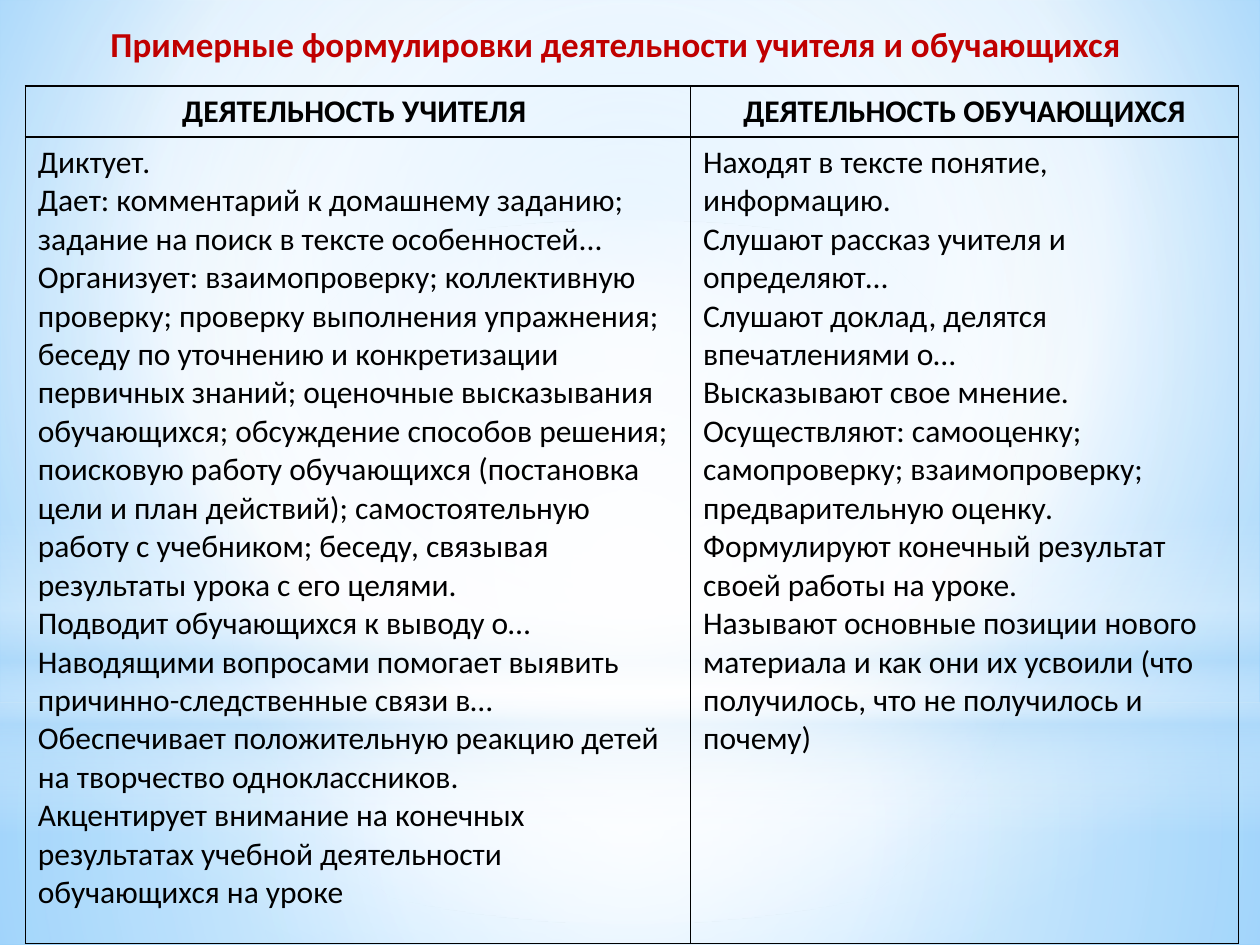
"""Builds a slide with a table of teacher and student activity wordings."""
from dataclasses import dataclass

from lxml import etree
from pptx import Presentation
from pptx.dml.color import RGBColor
from pptx.enum.shapes import MSO_SHAPE
from pptx.enum.text import MSO_ANCHOR, PP_ALIGN
from pptx.oxml.ns import qn
from pptx.util import Cm, Pt

RECTANGLE, ELLIPSE = MSO_SHAPE.RECTANGLE, MSO_SHAPE.OVAL
TOP = MSO_ANCHOR.TOP
LEFT, CENTER = PP_ALIGN.LEFT, PP_ALIGN.CENTER
FONT = "Calibri"
COLORS = {
    "title": "C00000", "text": "000000", "border": "000000", "white": "FFFFFF",
    "haze": "B4DCFA", "sky": "9ED5FF", "deep": "5BB9FF",
}
WIDTH, HEIGHT = 25.4, 19.05
COLUMNS = (13.41, 11.05)
ROWS = (1.02, 16.26)
MIDDLE = (50, 50, 50, 50)


@dataclass(frozen=True)
class Gradient:
    """Stops of position, colour and opacity; linear when focus is None."""
    stops: tuple[tuple[int, str, int], ...]
    focus: tuple[int, int, int, int] | None = MIDDLE


@dataclass(frozen=True)
class Glow:
    """A full-width translucent backdrop shape."""
    kind: int
    top: float
    height: float
    gradient: Gradient


@dataclass(frozen=True)
class Column:
    """A table column with its heading and lines."""
    heading: str
    lines: tuple[str, ...]


SKY = Gradient(((0, "sky", 100), (60, "white", 100), (100, "deep", 100)), (20, 10, 20, 60))
GLOWS = (
    Glow(RECTANGLE, 14.17, 4.88, Gradient(((0, "white", 91), (37, "white", 76), (100, "haze", 79)))),
    Glow(RECTANGLE, 0, 14.17, Gradient(((0, "white", 89), (48, "white", 62), (100, "haze", 79)))),
    Glow(RECTANGLE, 10.46, 6.35, Gradient(
        ((0, "white", 0), (29, "white", 30), (45, "haze", 40),
         (55, "white", 26), (65, "haze", 60), (100, "white", 0)), None)),
    Glow(ELLIPSE, 4.45, 14.17, Gradient(((0, "white", 100), (56, "white", 0)))),
)
TITLE = "Примерные формулировки деятельности учителя и обучающихся "
ACTIVITIES = (
    Column("ДЕЯТЕЛЬНОСТЬ УЧИТЕЛЯ ", (
        "Диктует.",
        "Дает: комментарий к домашнему заданию; задание на поиск в тексте особенностей...",
        "Организует: взаимопроверку; коллективную проверку; проверку выполнения упражнения; "
        "беседу по уточнению и конкретизации первичных знаний; оценочные высказывания "
        "обучающихся; обсуждение способов решения; поисковую работу обучающихся (постановка "
        "цели и план действий); самостоятельную работу с учебником; беседу, связывая "
        "результаты урока с его целями.",
        "Подводит обучающихся к выводу о…",
        "Наводящими вопросами помогает выявить причинно-следственные связи в…",
        "Обеспечивает положительную реакцию детей на творчество одноклассников.",
        "Акцентирует внимание на конечных результатах учебной деятельности обучающихся на уроке",
    )),
    Column("ДЕЯТЕЛЬНОСТЬ ОБУЧАЮЩИХСЯ", (
        "Находят в тексте понятие, информацию.",
        "Слушают рассказ учителя и определяют…",
        "Слушают доклад, делятся впечатлениями о…",
        "Высказывают свое мнение.",
        "Осуществляют: самооценку; самопроверку; взаимопроверку;",
        "предварительную оценку.",
        "Формулируют конечный результат своей работы на уроке.",
        "Называют основные позиции нового материала и как они их усвоили "
        "(что получилось, что не получилось и почему)",
    )),
)


def add_child(parent, tag: str, **attributes):
    """Append an XML element with the given attributes."""
    values = {name: str(value) for name, value in attributes.items()}
    return etree.SubElement(parent, qn(tag), values)


def apply_gradient(holder, gradient: Gradient) -> None:
    """Replace the solid fill of a holder with a gradient."""
    solid = holder.find(qn("a:solidFill"))
    fill = etree.Element(qn("a:gradFill"), {"rotWithShape": "1"})
    stops = add_child(fill, "a:gsLst")
    for position, color, opacity in gradient.stops:
        stop = add_child(stops, "a:gs", pos=position * 1000)
        shade = add_child(stop, "a:srgbClr", val=COLORS[color])
        if opacity < 100:
            add_child(shade, "a:alpha", val=opacity * 1000)
    if gradient.focus is None:
        add_child(fill, "a:lin", ang=90 * 60000, scaled=0)
    else:
        route = add_child(fill, "a:path", path="circle")
        edges = {side: share * 1000 for side, share in zip("ltrb", gradient.focus)}
        add_child(route, "a:fillToRect", **edges)
    holder.replace(solid, fill)


def draw_glow(page, glow: Glow) -> None:
    """Draw one backdrop shape."""
    shape = page.shapes.add_shape(glow.kind, 0, Cm(glow.top), Cm(WIDTH), Cm(glow.height))
    shape.shadow.inherit = False
    shape.line.fill.background()
    shape.fill.solid()
    apply_gradient(shape.element.spPr, glow.gradient)


def write_lines(frame, lines: tuple[str, ...], size: int, color: str, bold: bool, align) -> None:
    """Write each line as a paragraph with one run."""
    for index, line in enumerate(lines):
        para = frame.add_paragraph() if index else frame.paragraphs[0]
        para.alignment = align
        span = para.add_run()
        span.text = line
        span.font.name, span.font.size, span.font.bold = FONT, Pt(size), bold
        span.font.color.rgb = RGBColor.from_string(COLORS[color])


def draw_title(page) -> None:
    """Place the title above the backdrop."""
    box = page.shapes.title
    box.element.getparent().append(box.element)
    box.left, box.top, box.width, box.height = Cm(0.05), Cm(0.33), Cm(24.89), Cm(1.12)
    box.text_frame.word_wrap = True
    box.text_frame.vertical_anchor = TOP
    write_lines(box.text_frame, (TITLE,), 20, "title", True, CENTER)


def frame_cell(cell) -> None:
    """Clear the cell fill and outline its four sides."""
    cell.fill.background()
    properties = cell._tc.get_or_add_tcPr()
    for index, side in enumerate("LRTB"):
        border = etree.Element(qn(f"a:ln{side}"), {"w": str(Pt(1))})
        fill = add_child(border, "a:solidFill")
        add_child(fill, "a:srgbClr", val=COLORS["border"])
        properties.insert(index, border)


def draw_table(page, columns: tuple[Column, ...]) -> None:
    """Draw the two-column activity table."""
    table = page.shapes.add_table(len(ROWS), len(columns), Cm(0.51), Cm(1.73),
                                  Cm(sum(COLUMNS)), Cm(sum(ROWS))).table
    table.horz_banding = False
    for row, height in zip(table.rows, ROWS):
        row.height = Cm(height)
    for index, column in enumerate(columns):
        table.columns[index].width = Cm(COLUMNS[index])
        heading, body = table.cell(0, index), table.cell(1, index)
        write_lines(heading.text_frame, (column.heading,), 18, "text", True, CENTER)
        write_lines(body.text_frame, column.lines, 18, "text", False, LEFT)
        for cell in (heading, body):
            frame_cell(cell)


def main() -> None:
    """Build and save the deck."""
    deck = Presentation()
    deck.slide_width, deck.slide_height = Cm(WIDTH), Cm(HEIGHT)
    page = deck.slides.add_slide(deck.slide_layouts[5])
    page.background.fill.solid()
    apply_gradient(page.element.xpath(".//p:bgPr")[0], SKY)
    for glow in GLOWS:
        draw_glow(page, glow)
    draw_title(page)
    draw_table(page, ACTIVITIES)
    deck.save("out.pptx")


if __name__ == "__main__":
    main()
